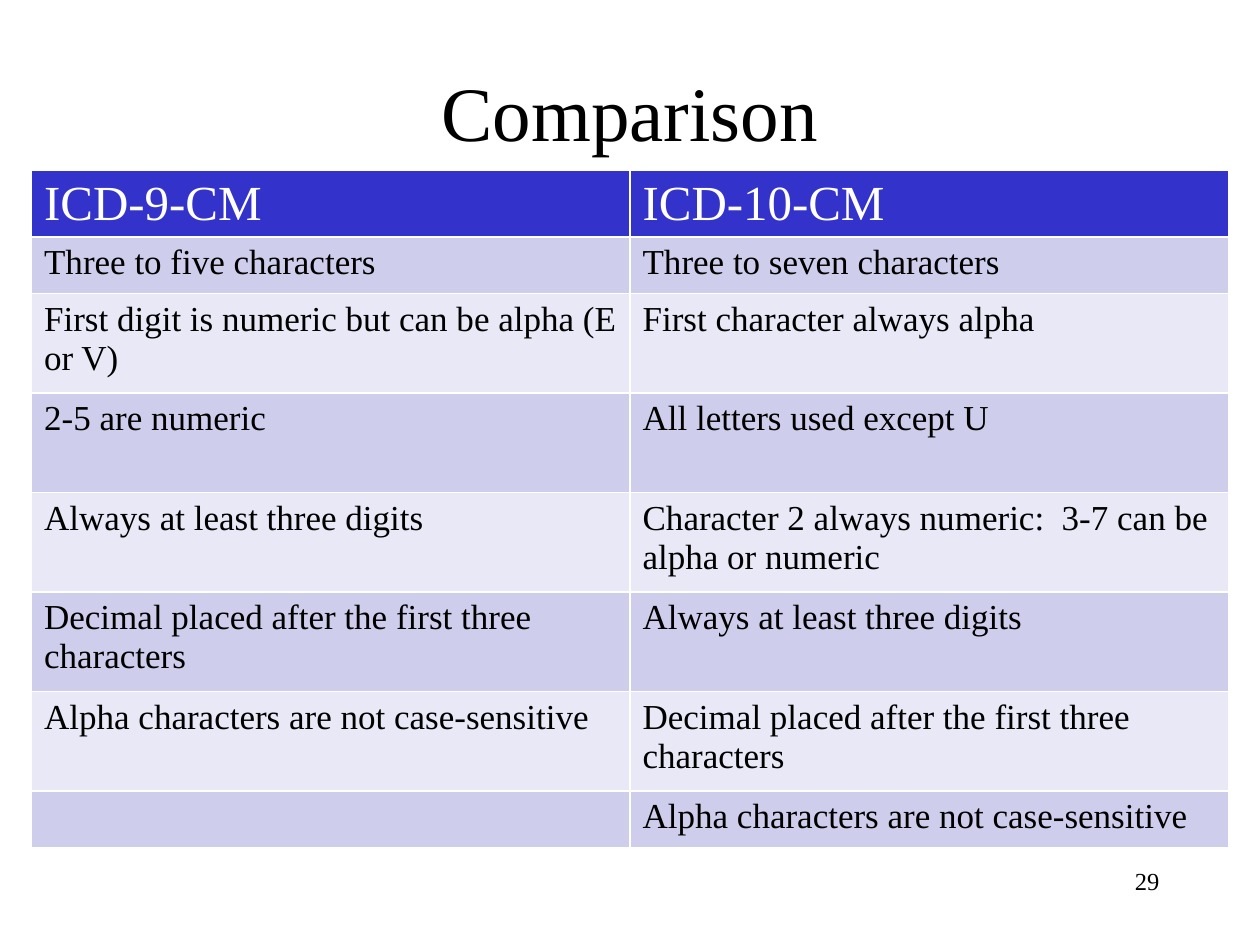
from pptx import Presentation
from pptx.dml.color import RGBColor
from pptx.enum.text import MSO_ANCHOR, PP_ALIGN
from pptx.util import Inches, Pt

MIDDLE = MSO_ANCHOR.MIDDLE
CENTER, RIGHT = PP_ALIGN.CENTER, PP_ALIGN.RIGHT
BLACK = RGBColor(0x00, 0x00, 0x00)
WHITE = RGBColor(0xFF, 0xFF, 0xFF)
HEADER_BLUE = RGBColor(0x33, 0x33, 0xCC)
BANDS = (RGBColor(0xCE, 0xCE, 0xEC), RGBColor(0xE8, 0xE8, 0xF6))
FONT = "Times New Roman"
TITLE_ONLY = 5

SLIDE_W, SLIDE_H = Inches(10), Inches(7.5)
HEADER_ROW, SINGLE_ROW, DOUBLE_ROW = Inches(0.41), Inches(0.45), Inches(0.79)

COMPARISON = [
    ("ICD-9-CM", "ICD-10-CM"),
    ("Three to five characters", "Three to seven characters"),
    ("First digit is numeric but can be alpha (E or V)",
     "First character always alpha"),
    ("2-5 are numeric", "All letters used except U"),
    ("Always at least three digits",
     "Character 2 always numeric:  3-7 can be alpha or numeric"),
    ("Decimal placed after the first three characters",
     "Always at least three digits"),
    ("Alpha characters are not case-sensitive",
     "Decimal placed after the first three characters"),
    ("", "Alpha characters are not case-sensitive"),
]
ROW_HEIGHTS = [HEADER_ROW, SINGLE_ROW] + [DOUBLE_ROW] * 5 + [SINGLE_ROW]


def share(left, top, width, height):
    """Turn shares of the slide into a box of lengths."""
    return (int(left * SLIDE_W), int(top * SLIDE_H),
            int(width * SLIDE_W), int(height * SLIDE_H))


def write(frame, text, size, color=BLACK, align=None):
    frame.text = text
    paragraph = frame.paragraphs[0]
    paragraph.alignment = align
    font = paragraph.font
    font.name, font.size, font.bold = FONT, Pt(size), False
    font.color.rgb = color


def place_title(slide, box):
    title = slide.shapes.title
    title.left, title.top, title.width, title.height = box
    title.text_frame.vertical_anchor = MIDDLE
    write(title.text_frame, "Comparison", 44, align=CENTER)


def place_comparison(slide, box):
    table = slide.shapes.add_table(len(COMPARISON), 2, *box).table
    for row, height in zip(table.rows, ROW_HEIGHTS):
        row.height = height
    for r, texts in enumerate(COMPARISON):
        is_header = r == 0
        for c, text in enumerate(texts):
            cell = table.cell(r, c)
            cell.fill.solid()
            cell.fill.fore_color.rgb = HEADER_BLUE if is_header else BANDS[(r - 1) % 2]
            if text:
                write(cell.text_frame, text, 28 if is_header else 20,
                      WHITE if is_header else BLACK)


def place_page_number(slide, box):
    frame = slide.shapes.add_textbox(*box).text_frame
    frame.word_wrap = True
    write(frame, "29", 14, align=RIGHT)


def main():
    deck = Presentation()
    deck.slide_width, deck.slide_height = SLIDE_W, SLIDE_H
    slide = deck.slides.add_slide(deck.slide_layouts[TITLE_ONLY])
    place_title(slide, share(0.075, 1 / 30, 0.85, 1 / 6))
    place_comparison(slide, share(0.025, 0.18, 0.95, 0.72))
    place_page_number(slide, share(0.72, 0.91, 0.21, 0.07))
    deck.save("out.pptx")


if __name__ == "__main__":
    main()
